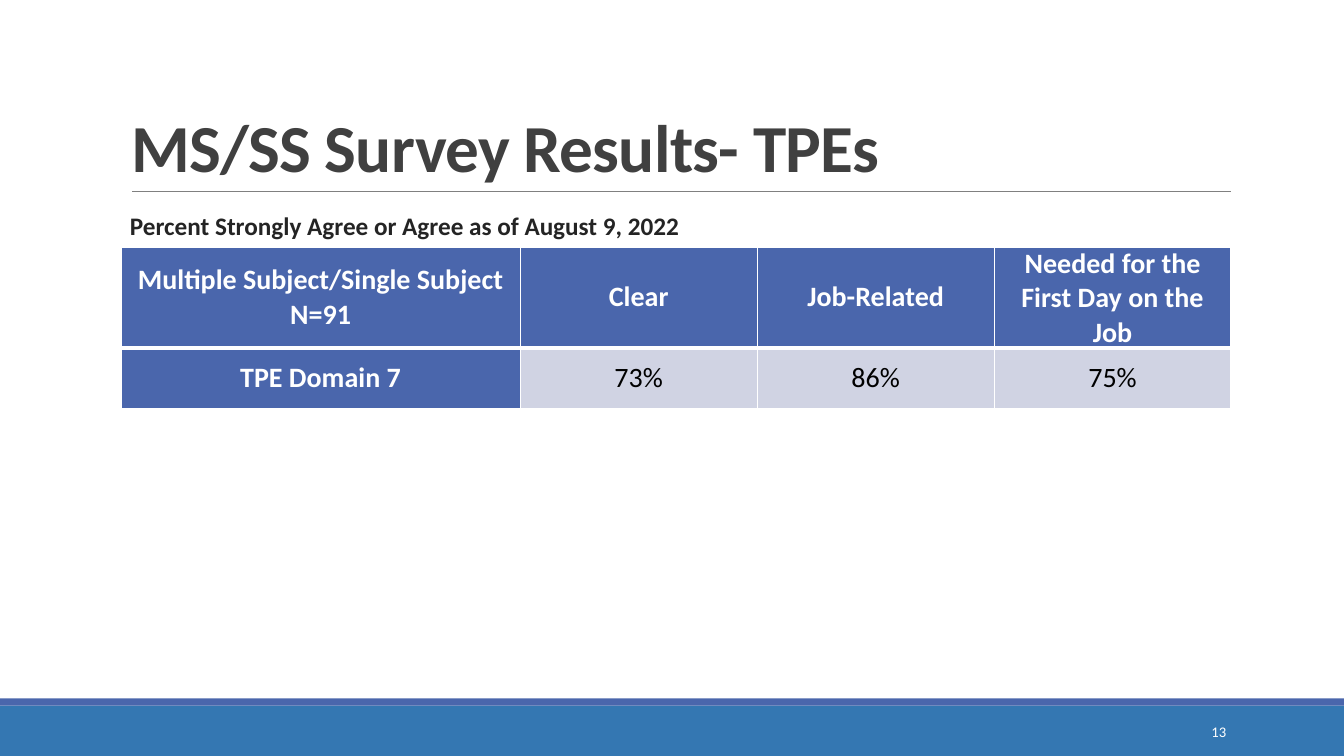
import pptx
import pptx.util
import pptx.dml.color
import pptx.enum.shapes
import pptx.enum.text
import lxml.etree

Inches, Pt = pptx.util.Inches, pptx.util.Pt
Align, Anchor = pptx.enum.text.PP_ALIGN, pptx.enum.text.MSO_ANCHOR
Fit = pptx.enum.text.MSO_AUTO_SIZE

FONT = "Calibri"
BLUE, PALE, WHITE, BLACK = "4A66AC", "D0D3E3", "FFFFFF", "000000"
TITLE = "MS/SS Survey Results- TPEs"
NOTE = "Percent Strongly Agree or Agree as of August 9, 2022"
NUMBER = "13"
ROWS = [
    [["Multiple Subject/Single Subject", "N=91"], ["Clear"], ["Job-Related"],
     ["Needed for the First Day on the Job"]],
    [["TPE Domain 7"], ["73%"], ["86%"], ["75%"]],
]
WIDTHS = [3.96, 2.35, 2.35, 2.35]
HEIGHTS = [0.77, 0.6]
BANDS = [(7, 0.5, "3477B2"), (6.93, 0.07, BLUE)]


def color(hue):
    return pptx.dml.color.RGBColor.from_string(hue)


def paint(fill, hue):
    fill.solid()
    fill.fore_color.rgb = color(hue)


def place(shape, *box):
    shape.left, shape.top, shape.width, shape.height = map(Inches, box)


def write(frame, lines, size, hue, bold=False, align=Align.LEFT):
    for i, line in enumerate(lines):
        para = frame.paragraphs[0] if i == 0 else frame.add_paragraph()
        para.alignment = align
        run = para.add_run()
        run.text = line
        run.font.name, run.font.size, run.font.bold = FONT, Pt(size), bold
        run.font.color.rgb = color(hue)


def label(box, text, size, hue, bold=False, align=Align.LEFT, anchor=Anchor.TOP):
    frame = slide.shapes.add_textbox(*map(Inches, box)).text_frame
    frame.word_wrap = True
    frame.vertical_anchor = anchor
    write(frame, [text], size, hue, bold, align)


def border(cell, sides):
    props = cell._tc.get_or_add_tcPr()
    space = pptx.oxml.ns.nsdecls("a")
    for i, (side, width) in enumerate(sides):
        props.insert(i, pptx.oxml.parse_xml(
            f'<a:ln{side} {space} w="{Pt(width)}"><a:solidFill>'
            f'<a:srgbClr val="{WHITE}"/></a:solidFill></a:ln{side}>'))


deck = pptx.Presentation()
deck.slide_width, deck.slide_height = Inches(13.33), Inches(7.5)
slide = deck.slides.add_slide(deck.slide_layouts[5])

for top, height, hue in BANDS:
    band = slide.shapes.add_shape(
        pptx.enum.shapes.MSO_SHAPE.RECTANGLE,
        *map(Inches, (0, top, 13.33, height)))
    band.shadow.inherit = False
    paint(band.fill, hue)
    band.line.fill.background()

rule = slide.shapes.add_connector(
    pptx.enum.shapes.MSO_CONNECTOR.STRAIGHT, *map(Inches, (1.31, 1.9, 12.21, 1.9)))
rule.line.color.rgb = color("808080")
rule.line.width = Pt(0.5)
lxml.etree.SubElement(rule._element.spPr, pptx.oxml.ns.qn("a:effectLst"))

title = slide.shapes.title
place(title, 1.2, 0.31, 11, 1.59)
frame = title.text_frame
frame.vertical_anchor = Anchor.BOTTOM
frame.word_wrap = True
frame.auto_size = Fit.NONE
write(frame, [TITLE], 48, "404040", True)
frame.paragraphs[0].line_spacing = 0.85
frame.paragraphs[0].runs[0].font._element.set("spc", "-50")

label((1.19, 2.04, 6.81, 0.4), NOTE, 18, "242424", True)

table = slide.shapes.add_table(
    len(ROWS), len(WIDTHS),
    *map(Inches, (1.2, 2.45, sum(WIDTHS), sum(HEIGHTS)))).table
for col, width in zip(table.columns, WIDTHS):
    col.width = Inches(width)
for r, (row, height) in enumerate(zip(ROWS, HEIGHTS)):
    table.rows[r].height = Inches(height)
    for c, lines in enumerate(row):
        cell = table.cell(r, c)
        head = r == 0 or c == 0
        cell.margin_left = cell.margin_right = Inches(0.07)
        cell.margin_top = cell.margin_bottom = 0
        cell.vertical_anchor = Anchor.MIDDLE
        paint(cell.fill, BLUE if head else PALE)
        write(cell.text_frame, lines, 20, WHITE if head else BLACK, head, Align.CENTER)
        border(cell, [("L", 1), ("R", 1), ("T", 3 if r else 1), ("B", 1 if r else 3)])

label((10.83, 7.06, 1.43, 0.4), NUMBER, 10.5, WHITE, False, Align.RIGHT, Anchor.MIDDLE)

deck.save("out.pptx")
